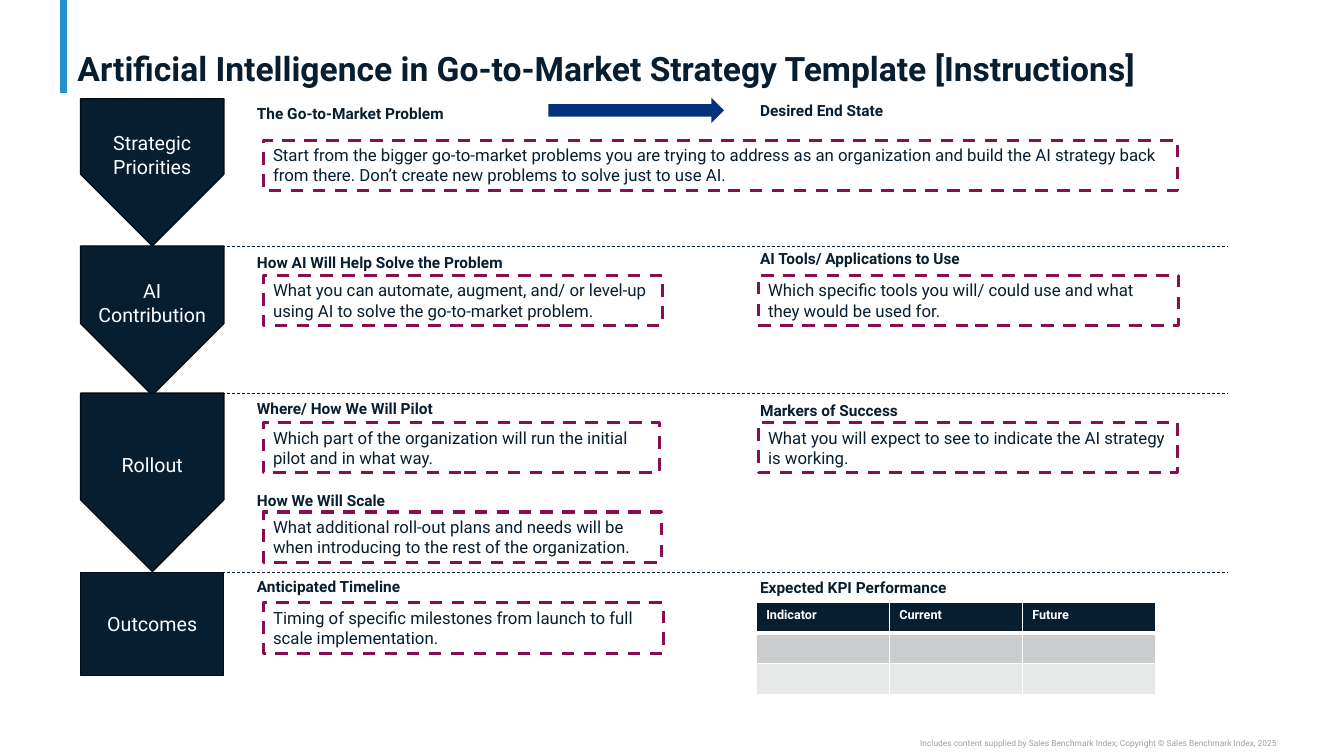
from dataclasses import dataclass

from lxml import etree
from pptx import Presentation
from pptx import util as u
from pptx.dml.color import RGBColor
from pptx.enum import dml, shapes, text
from pptx.oxml.ns import qn

I = u.Inches


@dataclass(frozen=True)
class Theme:
    font: str = "Roboto"
    navy: str = "071E31"
    edge: str = "030D15"
    blue: str = "2391CF"
    arrow: str = "03327C"
    berry: str = "880E4F"
    white: str = "FFFFFF"
    grey: str = "A0A0A0"
    rows: tuple = ("071E31", "CCCDCE", "E7E8E8")
    title: int = 24
    stage: int = 14
    note: int = 12
    label: int = 11
    cell: int = 9
    credit: int = 6


T = Theme()
LABEL_X, NOTE_X = (1.65, 6.64), (1.81, 6.72)

# Each item: column, label offset, label, note offset, note width, note
BANDS = [
    ("Strategic Priorities", 0.98, 1.46, [
        (0, 0, "The Go-to-Market Problem", 0.41, 9.07,
         "Start from the bigger go-to-market problems you are trying to address as an "
         "organization and build the AI strategy back from there. Don’t create new "
         "problems to solve just to use AI."),
        (1, -0.03, "Desired End State", 0, 0, "")]),
    ("AI Contribution", 2.44, 1.48, [
        (0, 0.02, "How AI Will Help Solve the Problem", 0.29, 3.96,
         "What you can automate, augment, and/ or level-up using AI to solve the "
         "go-to-market problem."),
        (1, -0.02, "AI Tools/ Applications to Use", 0.29, 4.17,
         "Which specific tools you will/ could use and what they would be used for.")]),
    ("Rollout", 3.9, 1.77, [
        (0, 0.01, "Where/ How We Will Pilot", 0.29, 3.93,
         "Which part of the organization will run the initial pilot and in what way."),
        (1, 0.03, "Markers of Success", 0.29, 4.16,
         "What you will expect to see to indicate the AI strategy is working."),
        (0, 0.92, "How We Will Scale", 1.18, 3.95,
         "What additional roll-out plans and needs will be when introducing to the "
         "rest of the organization.")]),
    ("Outcomes", 5.68, 1.02, [
        (0, 0, "Anticipated Timeline", 0.3, 3.97,
         "Timing of specific milestones from launch to full scale implementation."),
        (1, 0.01, "Expected KPI Performance", 0, 0, "")]),
]


def rgb(value):
    return RGBColor.from_string(value)


def write(tf, words, size, color=T.navy, bold=False, align=None, **frame):
    for name, value in {"word_wrap": True, **frame}.items():
        setattr(tf, name, value)
    p = tf.paragraphs[0]
    p.alignment = align
    r = p.add_run()
    r.text = words
    for name, value in {"name": T.font, "size": u.Pt(size), "bold": bold}.items():
        setattr(r.font, name, value)
    r.font.color.rgb = rgb(color)
    return p


def add_text(slide, box, words, size, **style):
    sp = slide.shapes.add_textbox(*map(I, box))
    return write(sp.text_frame, words, size, **style)


def add_box(slide, kind, box, fill, line=None, width=1):
    sp = slide.shapes.add_shape(kind, *map(I, box))
    sp.shadow.inherit = False
    sp.fill.solid()
    sp.fill.fore_color.rgb = rgb(fill)
    if line:
        sp.line.color.rgb = rgb(line)
        sp.line.width = u.Pt(width)
    else:
        sp.line.fill.background()
    return sp


def add_line(slide, x1, y1, x2, y2, color, width, dash=None):
    c = slide.shapes.add_connector(shapes.MSO_CONNECTOR.STRAIGHT, *map(I, (x1, y1, x2, y2)))
    c.line.color.rgb = rgb(color)
    c.line.width = u.Pt(width)
    c.line.dash_style = dash
    etree.SubElement(c._element.spPr, qn("a:effectLst"))


def header(slide, x, y, w, h):
    add_line(slide, x, y, x, y + h, T.blue, 5)
    p = add_text(slide, (x + 0.04, y + 0.04, w, h - 0.08),
                 "Artificial Intelligence in Go-to-Market Strategy Template [Instructions]",
                 T.title, bold=True, vertical_anchor=text.MSO_ANCHOR.BOTTOM,
                 margin_top=0, margin_bottom=0)
    p.line_spacing = 0.9


def stage(slide, x, y, w, h, name, last):
    """Draw a stage marker: a downward pentagon, or a rectangle for the last stage."""
    kind = shapes.MSO_SHAPE.RECTANGLE if last else shapes.MSO_SHAPE.PENTAGON
    box = (x, y, w, h) if last else (x + (w - h) / 2, y + (h - w) / 2, h, w)
    sp = add_box(slide, kind, box, T.navy, T.edge)
    write(sp.text_frame, name, T.stage, T.white, align=text.PP_ALIGN.CENTER,
          vertical_anchor=text.MSO_ANCHOR.MIDDLE)
    if not last:
        sp.rotation = 90
        sp.text_frame._txBody.bodyPr.set("vert", "vert270")


def note(slide, x, y, w, h, words):
    sp = add_box(slide, shapes.MSO_SHAPE.RECTANGLE, (x, y, w, h), T.white, T.berry, 2.25)
    sp.line.dash_style = dml.MSO_LINE.DASH
    write(sp.text_frame, words, T.note, align=text.PP_ALIGN.LEFT,
          vertical_anchor=text.MSO_ANCHOR.TOP,
          auto_size=text.MSO_AUTO_SIZE.SHAPE_TO_FIT_TEXT)


def band(slide, x, y, h, name, items, first, last):
    if not first:
        add_line(slide, x + 1.4, y, x + 11.38, y, T.navy, 0.5, dml.MSO_LINE.DASH)
    stage(slide, x, y, 1.42, h, name, last)
    for col, label_dy, label, note_dy, note_w, words in items:
        add_text(slide, (x + LABEL_X[col], y + label_dy, 3.93, 0.29), label, T.label, bold=True)
        if words:
            note(slide, x + NOTE_X[col], y + note_dy, note_w, 0.5, words)


def cell_borders(cell, bottom):
    tc_pr = cell._tc.get_or_add_tcPr()
    for i, (side, width) in enumerate(zip("LRTB", (1, 1, 1, bottom))):
        ln = etree.Element(qn(f"a:ln{side}"), w=str(u.Pt(width)))
        fill = etree.SubElement(ln, qn("a:solidFill"))
        etree.SubElement(fill, qn("a:srgbClr"), val=T.white)
        tc_pr.insert(i, ln)


def kpi_table(slide, x, y, w, h):
    heads = ("Indicator", "Current", "Future")
    table = slide.shapes.add_table(len(T.rows), len(heads), *map(I, (x, y, w, h))).table
    for i, color in enumerate(T.rows):
        for j, head in enumerate(heads):
            cell = table.cell(i, j)
            cell.fill.solid()
            cell.fill.fore_color.rgb = rgb(color)
            cell_borders(cell, 3 if i == 0 else 1)
            if i == 0:
                write(cell.text_frame, head, T.cell, T.white, True)
            else:
                end = cell.text_frame.paragraphs[0]._p.get_or_add_endParaRPr()
                end.set("sz", str(T.cell * 100))


def credit(slide, x, y, w, h):
    add_text(slide, (x, y, w, h),
             "Includes content supplied by Sales Benchmark Index; "
             "Copyright © Sales Benchmark Index, 2025",
             T.credit, color=T.grey, align=text.PP_ALIGN.RIGHT,
             margin_left=0, margin_top=0, margin_right=0, margin_bottom=0)


def main():
    prs = Presentation()
    prs.slide_width, prs.slide_height = I(13.33), I(7.5)
    slide = prs.slides.add_slide(prs.slide_layouts[6])
    header(slide, 0.63, 0, 11.99, 0.92)
    for i, (name, y, h, items) in enumerate(BANDS):
        band(slide, 0.8, y, h, name, items, i == 0, i == len(BANDS) - 1)
    add_box(slide, shapes.MSO_SHAPE.RIGHT_ARROW, (5.44, 0.97, 1.74, 0.25), T.arrow)
    kpi_table(slide, 7.5, 5.98, 3.96, 0.91)
    credit(slide, 7.5, 7.32, 5.16, 0.1)
    prs.save("out.pptx")


if __name__ == "__main__":
    main()
